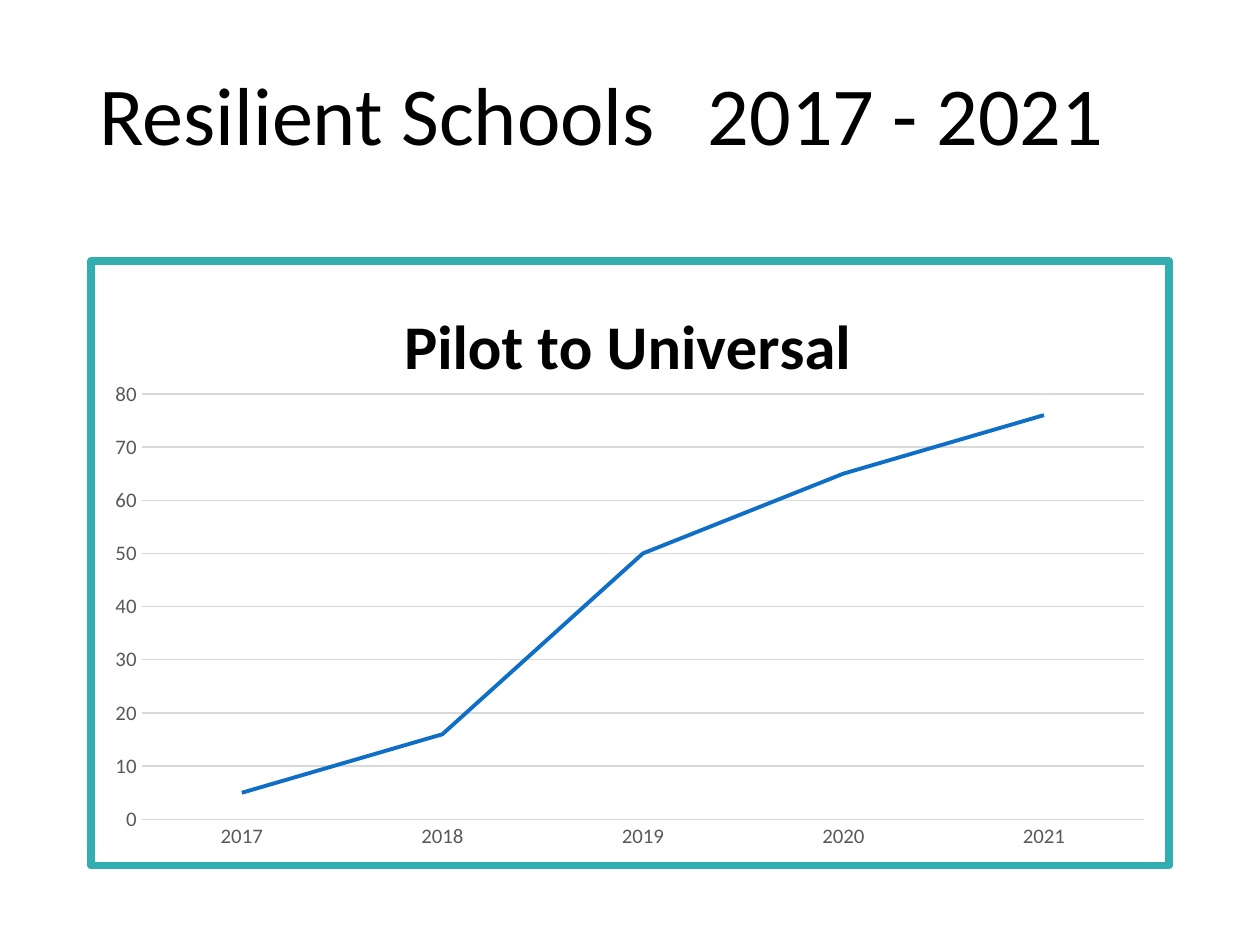
from dataclasses import dataclass

import lxml.etree
import pptx
import pptx.chart.data
import pptx.dml.color
import pptx.enum.chart
import pptx.enum.text
import pptx.oxml
import pptx.oxml.ns
import pptx.util

SLIDE_WIDTH, SLIDE_HEIGHT = pptx.util.Inches(10), pptx.util.Inches(7.5)
FONT = "Calibri"
BLACK, GREY, GRID, BLUE, TEAL = "000000", "595959", "D9D9D9", "0F6FC6", "32ADB0"
ADOPTION = {"2017": 5, "2018": 16, "2019": 50, "2020": 65, "2021": 76}


@dataclass(frozen=True)
class Area:
    """A box given as shares of its container's size."""
    left: float
    top: float
    width: float = 0
    height: float = 0

    def on_slide(self) -> tuple[int, int, int, int]:
        return (int(self.left * SLIDE_WIDTH), int(self.top * SLIDE_HEIGHT),
                int(self.width * SLIDE_WIDTH), int(self.height * SLIDE_HEIGHT))


MARGIN = 0.069
HEADING = Area(MARGIN, 0.043, 1 - 2 * MARGIN, 0.136)
CHART = Area(MARGIN, 0.272, 1 - 2 * MARGIN, 0.648)
CHART_TITLE = Area(0.28, 0.05)
PLOT = Area(0.047, 0.22, 0.93, 0.704)


def color(value: str) -> pptx.dml.color.RGBColor:
    return pptx.dml.color.RGBColor.from_string(value)


def style_font(font, size: float, value: str, bold: bool = False) -> None:
    font.name, font.size, font.bold = FONT, pptx.util.Pt(size), bold
    font.color.rgb = color(value)


def style_line(line, value: str, width: float) -> None:
    line.color.rgb = color(value)
    line.width = pptx.util.Pt(width)


def add_heading(slide) -> None:
    box = slide.shapes.add_textbox(*HEADING.on_slide())
    frame = box.text_frame
    frame.word_wrap = True
    frame.vertical_anchor = pptx.enum.text.MSO_ANCHOR.BOTTOM
    frame.text = "Resilient Schools\t2017 - 2021"
    paragraph = frame.paragraphs[0]
    paragraph.line_spacing = 0.9
    paragraph.space_after = pptx.util.Pt(6)
    style_font(paragraph.runs[0].font, 47, BLACK)
    properties = paragraph._p.get_or_add_pPr()
    tabs = lxml.etree.SubElement(properties, pptx.oxml.ns.qn("a:tabLst"))
    lxml.etree.SubElement(tabs, pptx.oxml.ns.qn("a:tab"),
                          pos=str(pptx.util.Inches(4.83)), algn="l")


def layout_element(area: Area, inner: bool):
    """Manual chart layout; only an inner plot area carries a size."""
    values = {"xMode": "edge", "yMode": "edge", "x": area.left, "y": area.top}
    if inner:
        values = {"layoutTarget": "inner", **values, "w": area.width, "h": area.height}
    children = "".join(f'<c:{name} val="{value}"/>' for name, value in values.items())
    return pptx.oxml.parse_xml(
        f'<c:layout {pptx.oxml.ns.nsdecls("c")}><c:manualLayout>{children}'
        "</c:manualLayout></c:layout>")


def place(parent, area: Area, position: int, inner: bool = False) -> None:
    for previous in parent.findall(pptx.oxml.ns.qn("c:layout")):
        parent.remove(previous)
    parent.insert(position, layout_element(area, inner))


def add_border(chart, value: str, width: float) -> None:
    border = pptx.oxml.parse_xml(
        f'<c:spPr {pptx.oxml.ns.nsdecls("c", "a")}><a:noFill/>'
        f'<a:ln w="{pptx.util.Pt(width)}"><a:solidFill><a:srgbClr val="{value}"/>'
        "</a:solidFill><a:round/></a:ln></c:spPr>")
    chart._chartSpace.find(pptx.oxml.ns.qn("c:chart")).addnext(border)


def style_axes(chart) -> None:
    for axis in (chart.category_axis, chart.value_axis):
        axis.major_tick_mark = axis.minor_tick_mark = pptx.enum.chart.XL_TICK_MARK.NONE
        style_font(axis.tick_labels.font, 12, GREY)
    style_line(chart.category_axis.format.line, GRID, 0.75)
    values = chart.value_axis
    values.minimum_scale, values.maximum_scale, values.major_unit = 0, 80, 10
    values.format.line.fill.background()
    values.has_major_gridlines = True
    style_line(values.major_gridlines.format.line, GRID, 0.75)


def add_adoption_chart(slide) -> None:
    data = pptx.chart.data.CategoryChartData()
    data.categories = list(ADOPTION)
    data.add_series("Series 1", list(ADOPTION.values()))
    chart = slide.shapes.add_chart(
        pptx.enum.chart.XL_CHART_TYPE.LINE_STACKED, *CHART.on_slide(), data).chart
    style_font(chart.font, 10, BLACK)
    chart.has_legend = False
    chart.plots[0].vary_by_categories = False
    series = chart.plots[0].series[0]
    series.smooth = False
    style_line(series.format.line, BLUE, 2.25)
    style_axes(chart)

    chart.has_title = True
    title = chart.chart_title
    title.text_frame.text = "Pilot to Universal"
    style_font(title.text_frame.paragraphs[0].runs[0].font, 36, BLACK, bold=True)
    title.include_in_layout = False
    place(title._element, CHART_TITLE, 1)
    place(chart._chartSpace.chart.plotArea, PLOT, 0, inner=True)
    add_border(chart, TEAL, 4.5)


def main() -> None:
    presentation = pptx.Presentation()
    presentation.slide_width, presentation.slide_height = SLIDE_WIDTH, SLIDE_HEIGHT
    slide = presentation.slides.add_slide(presentation.slide_layouts[6])
    add_heading(slide)
    add_adoption_chart(slide)
    presentation.save("out.pptx")


if __name__ == "__main__":
    main()
